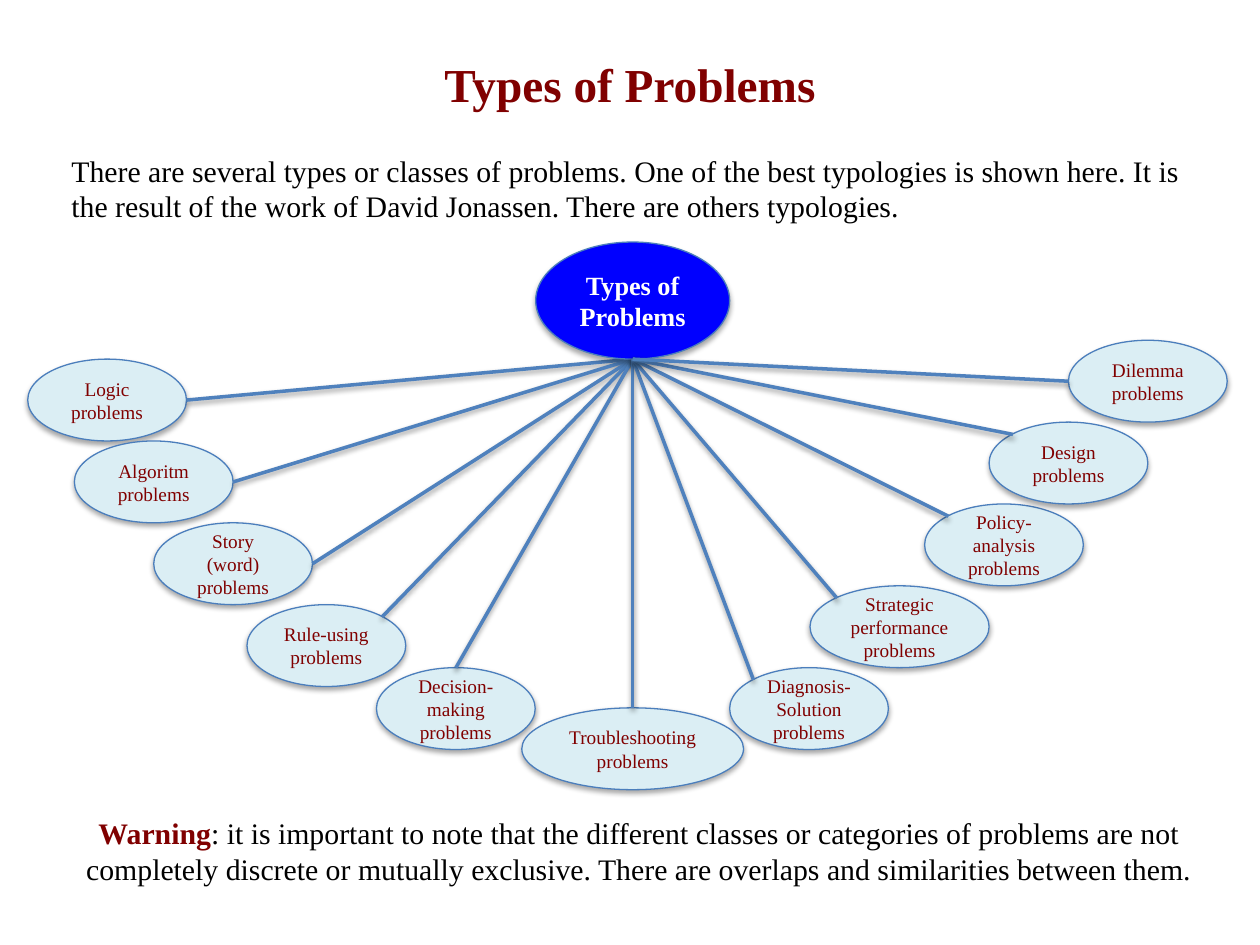
"""Build a slide that maps the types of problems around a central hub."""
from dataclasses import dataclass

from lxml import etree
from pptx import Presentation
from pptx.dml.color import RGBColor
from pptx.enum.shapes import MSO_CONNECTOR as Connector, MSO_SHAPE as Shape
from pptx.enum.text import MSO_ANCHOR as Anchor, PP_ALIGN as Align
from pptx.oxml.ns import qn
from pptx.util import Cm, Pt


@dataclass(frozen=True)
class Theme:
    font: str = "Times New Roman"
    maroon: str = "800000"
    black: str = "000000"
    white: str = "FFFFFF"
    hub: str = "0000FF"
    topic: str = "DBEEF4"
    outline: str = "4B7EBC"
    spoke: str = "4F81BD"
    title_size: int = 27
    body_size: int = 17
    hub_size: int = 15
    topic_size: int = 11


theme = Theme()


def write(frame, text, size, color=theme.black, bold=False, align=Align.CENTER):
    frame.word_wrap = True
    paragraph = frame.paragraphs[0]
    paragraph.alignment = align
    paragraph.space_before = Pt(0)
    run = paragraph.add_run()
    run.text = text
    run.font.name = theme.font
    run.font.size = Pt(size)
    run.font.bold = bold
    run.font.color.rgb = RGBColor.from_string(color)


def add_oval(box, fill, text, **text_format):
    oval = slide.shapes.add_shape(Shape.OVAL, *map(Cm, box))
    oval.fill.solid()
    oval.fill.fore_color.rgb = RGBColor.from_string(fill)
    oval.line.color.rgb = RGBColor.from_string(theme.outline)
    oval.line.width = Pt(0.75)
    oval.text_frame.vertical_anchor = Anchor.MIDDLE
    write(oval.text_frame, text, **text_format)
    return oval


deck = Presentation()
deck.slide_width, deck.slide_height = Cm(25.4), Cm(19.05)
slide = deck.slides.add_slide(deck.slide_layouts[5])

title = slide.shapes.title
title.left, title.top, title.width, title.height = map(Cm, (3.81, 0.94, 17.78, 1.5))
title.text_frame.vertical_anchor = Anchor.MIDDLE
write(title.text_frame, "Types of Problems", size=theme.title_size, color=theme.maroon, bold=True)

LEFT, TOP_LEFT, TOP, TOP_RIGHT, RIGHT = (0, 0.5), (0.15, 0.15), (0.5, 0), (0.85, 0.15), (1, 0.5)
topic_width, topic_height = 3.2, 1.65
topics = [
    ("Logic problems", 0.56, 7.24, topic_width, RIGHT),
    ("Algoritm problems", 1.5, 8.89, topic_width, RIGHT),
    ("Story (word) problems", 3.1, 10.54, topic_width, RIGHT),
    ("Rule-using problems", 4.98, 12.19, topic_width, TOP_RIGHT),
    ("Decision-making problems", 7.59, 13.46, topic_width, TOP),
    ("Troubleshooting problems", 10.52, 14.27, 4.47, TOP),
    ("Diagnosis-Solution problems", 14.71, 13.46, topic_width, TOP_LEFT),
    ("Strategic performance problems", 16.33, 11.81, 3.61, TOP_LEFT),
    ("Policy-analysis problems", 18.64, 10.16, topic_width, TOP_LEFT),
    ("Design problems", 19.94, 8.51, topic_width, TOP_LEFT),
    ("Dilemma problems", 21.54, 6.86, topic_width, LEFT),
]
ovals = [
    add_oval((left, top, width, topic_height), theme.topic, name,
             size=theme.topic_size, color=theme.maroon)
    for name, left, top, width, _ in topics
]

intro = slide.shapes.add_textbox(*map(Cm, (1.19, 2.95, 22.94, 1.7)))
write(intro.text_frame,
      "There are several types or classes of problems. One of the best typologies is shown here. "
      "It is the result of the work of David Jonassen. There are others typologies.",
      size=theme.body_size, align=Align.LEFT)

hub_box = hub_left, hub_top, hub_width, hub_height = 10.8, 4.88, 3.91, 2.36
hub_foot = hub_left + hub_width / 2, hub_top + hub_height
spokes = []
for name, left, top, width, (across, down) in topics:
    if name.startswith("Troubleshooting"):
        ovals.append(add_oval(hub_box, theme.hub, "Types of Problems",
                              size=theme.hub_size, color=theme.white, bold=True))
    topic_end = left + across * width, top + down * topic_height
    spoke = slide.shapes.add_connector(Connector.STRAIGHT, *map(Cm, topic_end + hub_foot))
    spoke.line.color.rgb = RGBColor.from_string(theme.spoke)
    spoke.line.width = Pt(2)
    spokes.append(spoke)

for pieces, distance, opacity in ((ovals, 1.8, 35), (spokes, 1.6, 38)):
    for piece in pieces:
        effects = etree.SubElement(piece.element.spPr, qn("a:effectLst"))
        shadow = etree.SubElement(effects, qn("a:outerShdw"), blurRad=str(Pt(3.1)),
                                  dist=str(Pt(distance)), dir="5400000", rotWithShape="0")
        shade = etree.SubElement(shadow, qn("a:srgbClr"), val=theme.black)
        etree.SubElement(shade, qn("a:alpha"), val=str(opacity * 1000))

warning = slide.shapes.add_textbox(*map(Cm, (1.27, 16.31, 23.24, 1.7)))
write(warning.text_frame, "Warning", size=theme.body_size, color=theme.maroon, bold=True)
write(warning.text_frame,
      ": it is important to note that the different classes or categories of problems are not "
      "completely discrete or mutually exclusive. There are overlaps and similarities between them.",
      size=theme.body_size)

deck.save("out.pptx")
